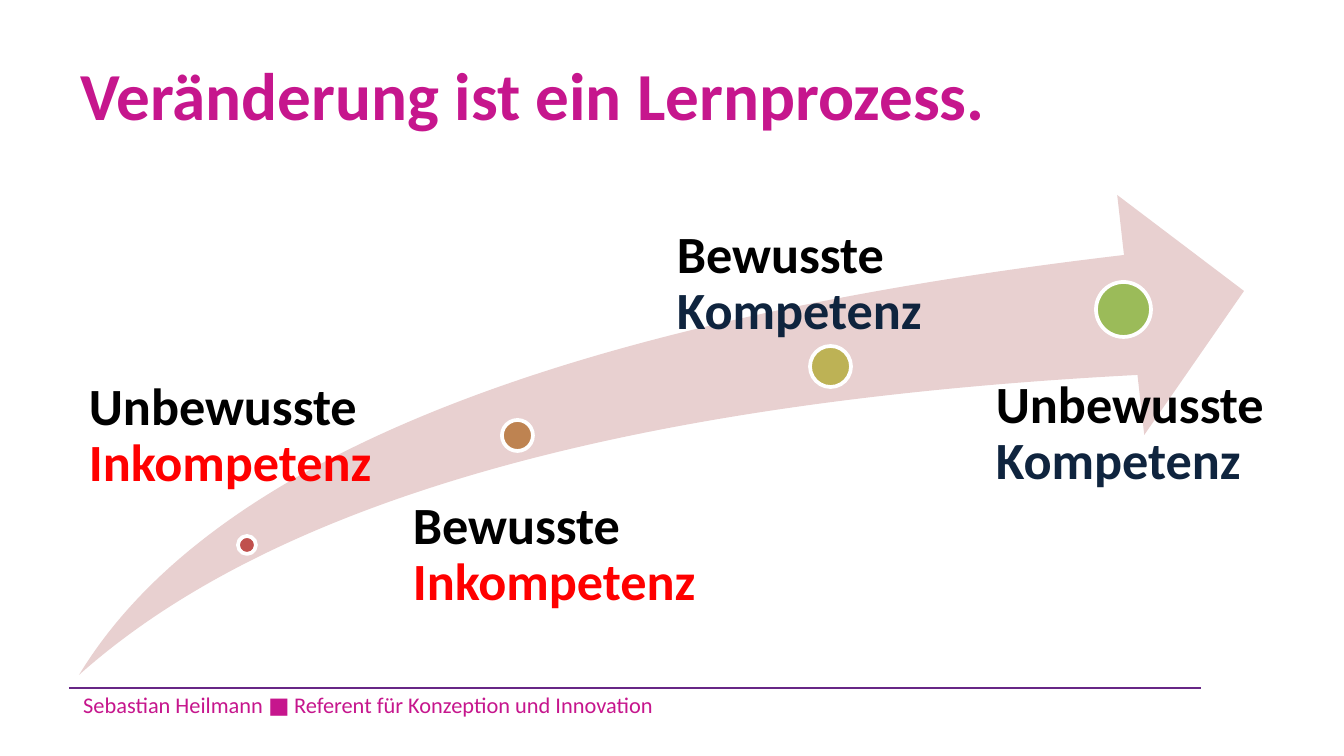
from dataclasses import dataclass

from lxml import etree
from pptx import Presentation
from pptx import util as u
from pptx.dml.color import RGBColor
from pptx.enum import shapes, text
from pptx.oxml.ns import qn

EMU_PER_PX = u.Inches(10) / 1344
FONT = "Calibri"
MAGENTA, PURPLE, ROSE, WHITE = "C6168D", "672686", "E8D0D0", "FFFFFF"
BLACK, RED, NAVY = "000000", "FF0000", "0F243E"


@dataclass(frozen=True)
class Box:
    left: int
    top: int
    width: int
    height: int


@dataclass(frozen=True)
class Stage:
    """One learning stage: a dot on the arrow and its two-coloured label."""
    center_x: int
    center_y: int
    diameter: int
    dot_color: str
    label: Box
    inset: int
    awareness: str
    skill: str
    skill_color: str


STAGES = [
    Stage(247, 545, 18, "C0504D", Box(79, 380, 358, 114), 10,
          "Unbewusste ", "Inkompetenz", RED),
    Stage(518, 436, 31, "BE8351", Box(396, 499, 438, 155), 17,
          "Bewusste ", "Inkompetenz", RED),
    Stage(830, 367, 41, "BDB255", Box(655, 228, 430, 151), 22,
          "Bewusste ", "Kompetenz", NAVY),
    Stage(1123, 310, 55, "9BBB59", Box(968, 378, 309, 207), 28,
          "Unbewusste ", "Kompetenz", NAVY),
]


def px(length: int) -> u.Emu:
    return u.Emu(round(length * EMU_PER_PX))


def place(box: Box) -> tuple:
    return px(box.left), px(box.top), px(box.width), px(box.height)


def paint(color_format, color: str) -> None:
    color_format.rgb = RGBColor.from_string(color)


def set_font(font, size: int, bold: bool = False) -> None:
    font.name, font.size, font.bold = FONT, u.Pt(size), bold


def add_title(slide, box: Box, wording: str) -> None:
    title = slide.shapes.title
    title.left, title.top, title.width, title.height = place(box)
    frame = title.text_frame
    frame.text = wording
    frame.vertical_anchor = text.MSO_ANCHOR.MIDDLE
    paragraph = frame.paragraphs[0]
    paragraph.alignment = text.PP_ALIGN.LEFT
    set_font(paragraph.font, 36, bold=True)
    paint(paragraph.font.color, MAGENTA)


def add_footer(slide, box: Box, wording: str) -> None:
    frame = slide.shapes.add_textbox(*place(box)).text_frame
    frame.word_wrap = True
    frame.vertical_anchor = text.MSO_ANCHOR.MIDDLE
    frame.text = wording
    font = frame.paragraphs[0].font
    set_font(font, 12)
    paint(font.color, MAGENTA)


def add_rule(slide, left: int, right: int, y: int) -> None:
    rule = slide.shapes.add_connector(
        shapes.MSO_CONNECTOR.STRAIGHT, px(left), px(y), px(right), px(y))
    rule.line.width = u.Pt(1)
    paint(rule.line.color, PURPLE)
    etree.SubElement(rule._element.spPr, qn("a:effectLst"))


def add_filled_shape(slide, kind, box: Box, color: str):
    shape = slide.shapes.add_shape(kind, *place(box))
    shape.shadow.inherit = False
    shape.fill.solid()
    paint(shape.fill.fore_color, color)
    shape.line.fill.background()
    return shape


def add_arrow(slide, box: Box) -> None:
    arrow = add_filled_shape(slide, shapes.MSO_SHAPE.SWOOSH_ARROW, box, ROSE)
    arrow.adjustments[0] = 0.25
    arrow.adjustments[1] = 0.25


def add_dot(slide, stage: Stage) -> None:
    radius = stage.diameter / 2
    box = Box(round(stage.center_x - radius), round(stage.center_y - radius),
              stage.diameter, stage.diameter)
    dot = add_filled_shape(slide, shapes.MSO_SHAPE.OVAL, box, stage.dot_color)
    paint(dot.line.color, WHITE)
    dot.line.width = u.Pt(2)


def add_label(slide, stage: Stage) -> None:
    frame = slide.shapes.add_textbox(*place(stage.label)).text_frame
    frame.word_wrap = True
    frame.margin_left = px(stage.inset)
    frame.margin_top = frame.margin_right = frame.margin_bottom = 0
    paragraph = frame.paragraphs[0]
    paragraph.line_spacing = 0.9
    set_font(paragraph.font, 28, bold=True)
    for wording, color in ((stage.awareness, BLACK),
                           (stage.skill, stage.skill_color)):
        run = paragraph.add_run()
        run.text = wording
        paint(run.font.color, color)


def main() -> None:
    presentation = Presentation()
    presentation.slide_width, presentation.slide_height = px(1344), px(756)
    slide = presentation.slides.add_slide(presentation.slide_layouts[5])
    add_footer(slide, Box(70, 683, 687, 44),
               "Sebastian Heilmann ■ Referent für Konzeption und Innovation")
    add_rule(slide, 69, 1201, 688)
    add_title(slide, Box(67, 31, 1210, 126), "Veränderung ist ein Lernprozess.")
    add_arrow(slide, Box(79, 195, 1165, 480))
    for stage in STAGES:
        add_dot(slide, stage)
        add_label(slide, stage)
    presentation.save("out.pptx")


if __name__ == "__main__":
    main()
